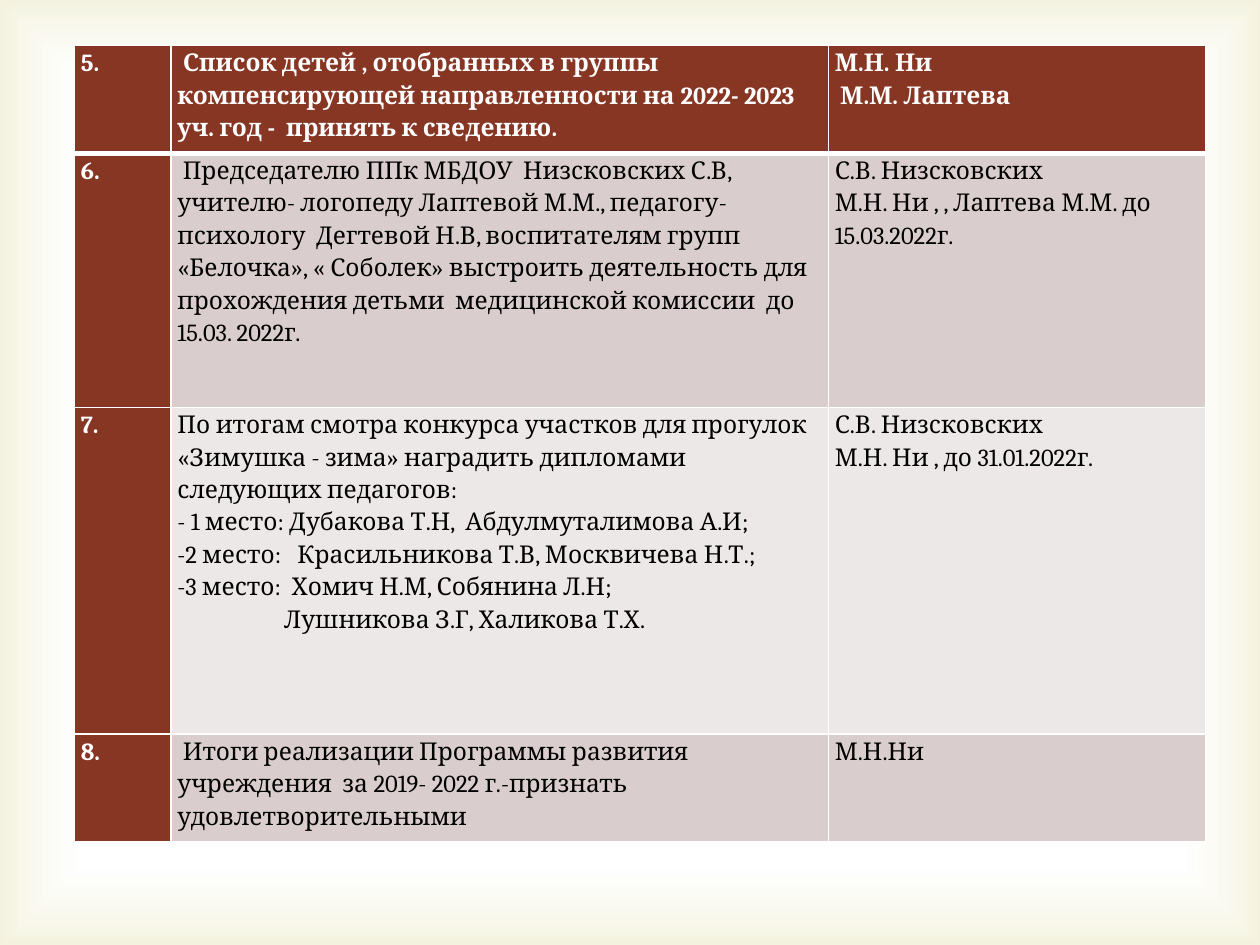
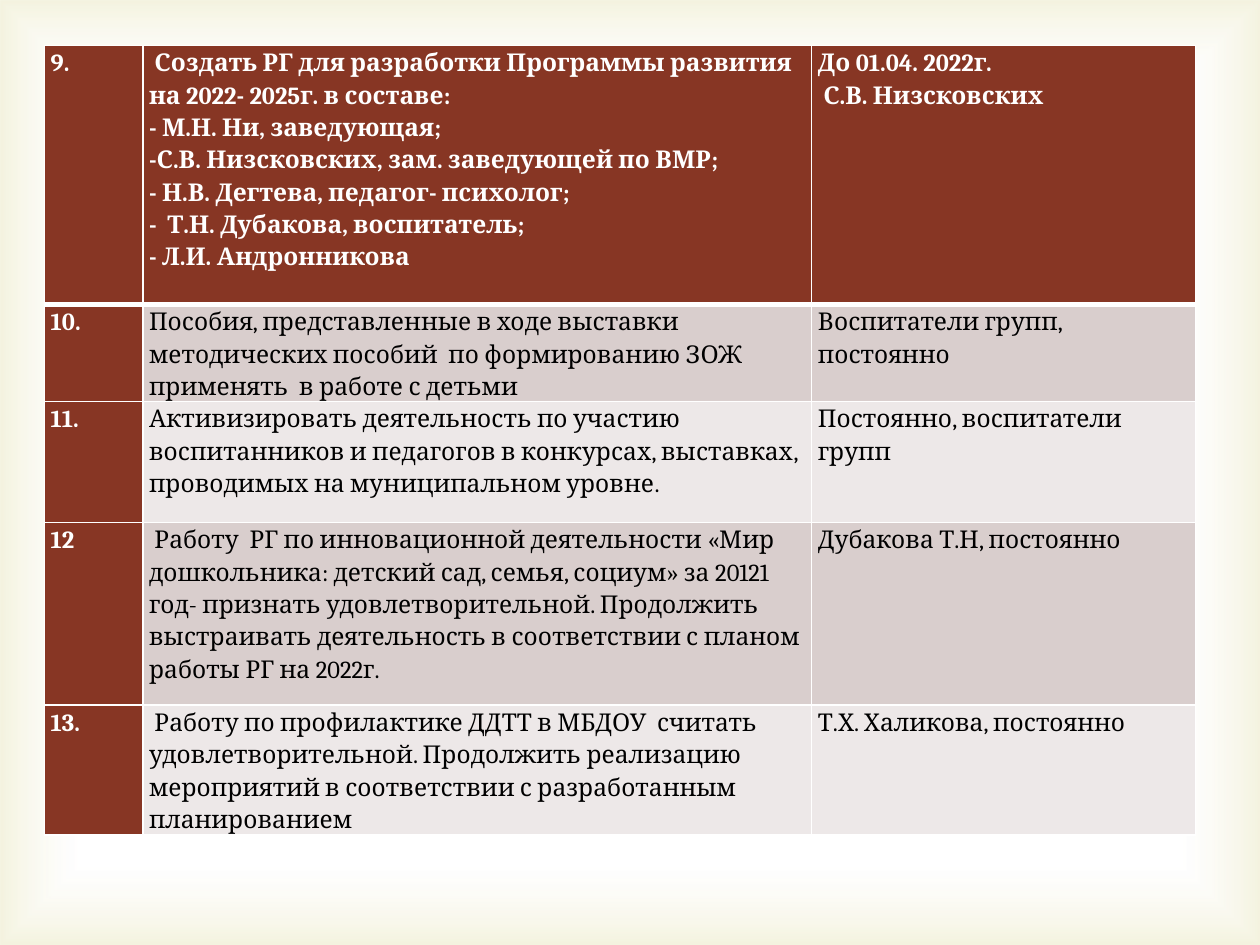
from pptx import Presentation
from pptx.dml.color import RGBColor as RGB
from pptx.enum.shapes import MSO_SHAPE as Shape
from pptx.oxml import parse_xml
from pptx.oxml.ns import nsdecls
from pptx.util import Pt

WIDE, HIGH = Pt(720), Pt(540)
WHITE = RGB(0xFF, 0xFF, 0xFF)
BLACK = RGB(0, 0, 0)
BRICK = RGB(0x87, 0x36, 0x24)
ROSE = RGB(0xD9, 0xCE, 0xCD)
PALE = RGB(0xED, 0xE8, 0xE8)
OLIVE = RGB(0xD1, 0xCA, 0x75)
FONT = "Cambria"
TOP = 25.9
INDENT = "\t"  # marks a line set in from the left


def write(frame, text, size=14, color=BLACK, bold=False, step=61):
    """Fill a frame, one paragraph per line of text."""
    for i, line in enumerate(text.split("\n")):
        para = frame.paragraphs[0] if i == 0 else frame.add_paragraph()
        para.line_spacing = 1.15
        if line.startswith(INDENT):
            para._p.get_or_add_pPr().set("marL", str(Pt(step)))
        run = para.add_run()
        run.text = line.lstrip(INDENT)
        font = run.font
        font.name, font.size, font.bold = FONT, Pt(size), bold
        font.color.rgb = color


class Deck:
    def __init__(self):
        self.file = Presentation()
        self.file.slide_width, self.file.slide_height = WIDE, HIGH
        self.slide = None

    def page(self):
        self.slide = self.file.slides.add_slide(self.file.slide_layouts[6])
        back = self.slide.background.fill
        back.solid()
        back.fore_color.rgb = WHITE
        self.glow()

    def glow(self):
        """Soft olive frame fading to a white middle."""
        box = self.slide.shapes.add_shape(Shape.RECTANGLE, 0, 0, WIDE, HIGH)
        box.shadow.inherit = False
        box.line.fill.background()
        stops = "".join(
            f'<a:gs pos="{pos * 1000}"><a:srgbClr val="{color}">'
            f'<a:alpha val="{alpha * 1000}"/></a:srgbClr></a:gs>'
            for pos, color, alpha in ((83, WHITE, 11), (100, OLIVE, 23)))
        grad = parse_xml(
            f'<a:gradFill {nsdecls("a")} rotWithShape="1"><a:gsLst>{stops}</a:gsLst>'
            '<a:path path="rect"><a:fillToRect l="50000" t="50000" r="50000" b="50000"/>'
            '</a:path></a:gradFill>')
        box._element.spPr.find("{*}prstGeom").addnext(grad)

    def edges(self, cell, **widths):
        """White cell borders; the widths go by side."""
        props = cell._tc.get_or_add_tcPr()
        for i, side in enumerate("LRTB"):
            props.insert(i, parse_xml(
                f'<a:ln{side} {nsdecls("a")} w="{Pt(widths.get(side, 1))}"><a:solidFill>'
                f'<a:srgbClr val="{WHITE}"/></a:solidFill></a:ln{side}>'))

    def cell(self, cell, text, row, col):
        head = row == 0 or col == 0
        cell.margin_left = cell.margin_right = Pt(3.6)
        cell.margin_top = cell.margin_bottom = 0
        cell.fill.solid()
        cell.fill.fore_color.rgb = BRICK if head else ROSE if row % 2 else PALE
        self.edges(cell, T=3 if row == 1 else 1, B=3 if row == 0 else 1)
        write(cell.text_frame, text, color=WHITE if head else BLACK, bold=head)

    def table(self, left, cols, rows, data):
        frame = self.slide.shapes.add_table(
            len(rows), len(cols), Pt(left), Pt(TOP), Pt(sum(cols)), Pt(sum(rows)))
        grid = frame.table
        grid.first_row = grid.horz_banding = False
        for col, size in zip(grid.columns, cols):
            col.width = Pt(size)
        for row, size in zip(grid.rows, rows):
            row.height = Pt(size)
        for r, line in enumerate(data):
            for c, text in enumerate(line):
                self.cell(grid.cell(r, c), text, r, c)


# Decisions 5 to 8
FIRST = [
    ("5.",
     " Список детей , отобранных в группы компенсирующей направленности "
     "на 2022- 2023 уч. год -  принять к сведению.",
     "М.Н. Ни\n М.М. Лаптева"),
    ("6.",
     " Председателю ППк МБДОУ  Низсковских С.В, учителю- логопеду Лаптевой М.М., "
     "педагогу- психологу  Дегтевой Н.В, воспитателям групп «Белочка», « Соболек» "
     "выстроить деятельность для прохождения детьми  медицинской комиссии  "
     "до 15.03. 2022г.",
     "С.В. Низсковских\nМ.Н. Ни , , Лаптева М.М. до 15.03.2022г."),
    ("7.",
     "По итогам смотра конкурса участков для прогулок «Зимушка - зима» "
     "наградить дипломами следующих педагогов:\n"
     "- 1 место: Дубакова Т.Н,  Абдулмуталимова А.И;\n"
     "-2 место:   Красильникова Т.В, Москвичева Н.Т.;\n"
     "-3 место:  Хомич Н.М, Собянина Л.Н;\n"
     f"{INDENT}Лушникова З.Г, Халикова Т.Х.",
     "С.В. Низсковских\nМ.Н. Ни , до 31.01.2022г."),
    ("8.",
     " Итоги реализации Программы развития учреждения  за 2019- 2022 г.-признать "
     "удовлетворительными",
     "М.Н.Ни"),
]

# Decisions 9 to 13
SECOND = [
    ("9.",
     " Создать РГ для разработки Программы развития на 2022- 2025г. в составе:\n"
     "- М.Н. Ни, заведующая;\n"
     "-С.В. Низсковских, зам. заведующей по ВМР;\n"
     "- Н.В. Дегтева, педагог- психолог;\n"
     "-  Т.Н. Дубакова, воспитатель;\n"
     "- Л.И. Андронникова",
     "До 01.04. 2022г.\n С.В. Низсковских"),
    ("10.",
     "Пособия, представленные в ходе выставки методических пособий  "
     "по формированию ЗОЖ применять  в работе с детьми",
     "Воспитатели групп, постоянно"),
    ("11.",
     "Активизировать деятельность по участию воспитанников и педагогов "
     "в конкурсах, выставках, проводимых на муниципальном уровне.",
     "Постоянно, воспитатели групп"),
    ("12",
     " Работу  РГ по инновационной деятельности «Мир дошкольника: детский сад, "
     "семья, социум» за 20121 год- признать удовлетворительной. Продолжить "
     "выстраивать деятельность в соответствии с планом работы РГ на 2022г.",
     "Дубакова Т.Н, постоянно"),
    ("13.",
     " Работу по профилактике ДДТТ в МБДОУ  считать удовлетворительной. "
     "Продолжить реализацию мероприятий в соответствии с разработанным "
     "планированием",
     "Т.Х. Халикова, постоянно"),
]


def main():
    deck = Deck()
    deck.page()
    deck.table(42.6, (55.2, 375.7, 215.4), (61.7, 145.2, 186.8, 61.7), FIRST)
    deck.page()
    deck.table(25.4, (56.2, 382.2, 219.3), (148, 55.6, 69.1, 104.4, 74), SECOND)
    deck.file.save("out.pptx")


if __name__ == "__main__":
    main()
